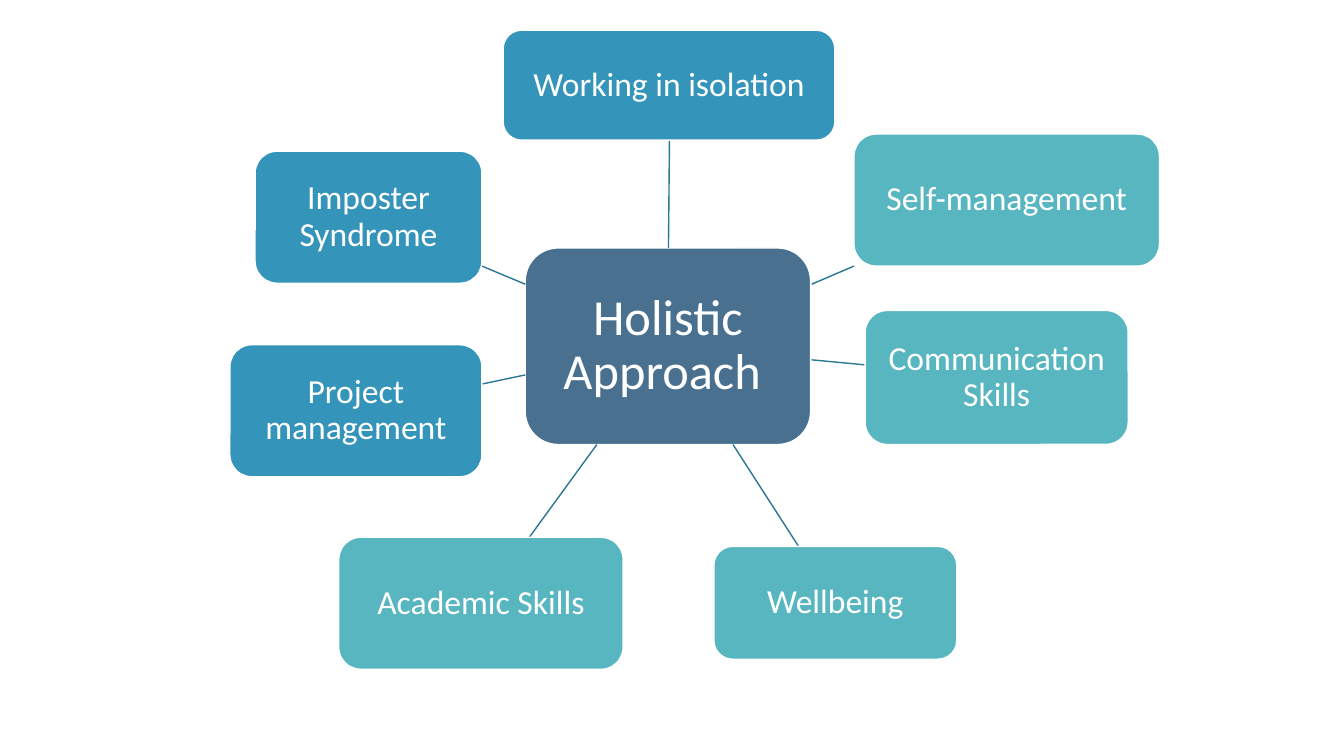
from pptx import Presentation
from pptx.dml.color import RGBColor
from pptx.enum.shapes import MSO_CONNECTOR, MSO_SHAPE
from pptx.enum.text import MSO_ANCHOR as Anchor, PP_ALIGN as Align
from pptx.oxml.ns import qn
from pptx.util import Inches, Pt
from lxml.etree import SubElement

WHITE = RGBColor(0xFF, 0xFF, 0xFF)
SLATE = RGBColor(0x4A, 0x70, 0x90)
BLUE = RGBColor(0x34, 0x94, 0xBA)
TEAL = RGBColor(0x58, 0xB6, 0xC0)
SPOKE = RGBColor(0x2A, 0x77, 0x95)

HUB = ("Holistic Approach ", SLATE, (5.21, 2.46, 2.83, 1.95))
TOPICS = [
    ("Working in isolation", BLUE, (4.99, 0.3, 3.29, 1.09), (6.63, 2.46, 6.64, 1.39)),
    ("Self-management", TEAL, (8.47, 1.33, 3.03, 1.31), (8.05, 2.82, 8.47, 2.64)),
    ("Communication Skills", TEAL, (8.58, 3.08, 2.61, 1.33), (8.05, 3.57, 8.58, 3.62)),
    ("Wellbeing", TEAL, (7.08, 5.42, 2.41, 1.12), (7.27, 4.41, 7.92, 5.42)),
    ("Academic Skills", TEAL, (3.36, 5.33, 2.82, 1.31), (5.92, 4.41, 5.25, 5.33)),
    ("Project management", BLUE, (2.28, 3.42, 2.5, 1.31), (5.21, 3.72, 4.78, 3.81)),
    ("Imposter Syndrome", BLUE, (2.53, 1.5, 2.25, 1.31), (5.21, 2.82, 4.78, 2.64)),
]


class MindMap:
    """Draws the nodes and spokes of a mind map on one page."""

    font_name = "Calibri"
    line_width = Pt(1)

    def __init__(self, page):
        self.page = page

    def node(self, text, color, bounds, size=24, inset=0.07):
        box = self.page.shapes.add_shape(MSO_SHAPE.ROUNDED_RECTANGLE, *map(Inches, bounds))
        box.shadow.inherit = False
        box.fill.solid()
        box.fill.fore_color.rgb = color
        box.line.color.rgb = WHITE
        box.line.width = self.line_width
        frame = box.text_frame
        frame.word_wrap = True
        frame.vertical_anchor = Anchor.MIDDLE
        frame.margin_left = frame.margin_right = Inches(inset)
        frame.margin_top = frame.margin_bottom = Inches(inset)
        para = frame.paragraphs[0]
        para.text = text
        para.alignment = Align.CENTER
        para.line_spacing = 0.9
        para.font.name = self.font_name
        para.font.size = Pt(size)
        para.font.color.rgb = WHITE

    def spoke(self, ends):
        line = self.page.shapes.add_connector(MSO_CONNECTOR.STRAIGHT, *map(Inches, ends))
        line.line.color.rgb = SPOKE
        line.line.width = self.line_width
        SubElement(line._element.spPr, qn("a:effectLst"))


def main():
    deck = Presentation()
    deck.slide_width, deck.slide_height = Inches(13.33), Inches(7.5)
    mind_map = MindMap(deck.slides.add_slide(deck.slide_layouts[6]))
    mind_map.node(*HUB, size=36, inset=0.1)
    for text, color, bounds, ends in TOPICS:
        mind_map.spoke(ends)
        mind_map.node(text, color, bounds)
    deck.save("out.pptx")


if __name__ == "__main__":
    main()
